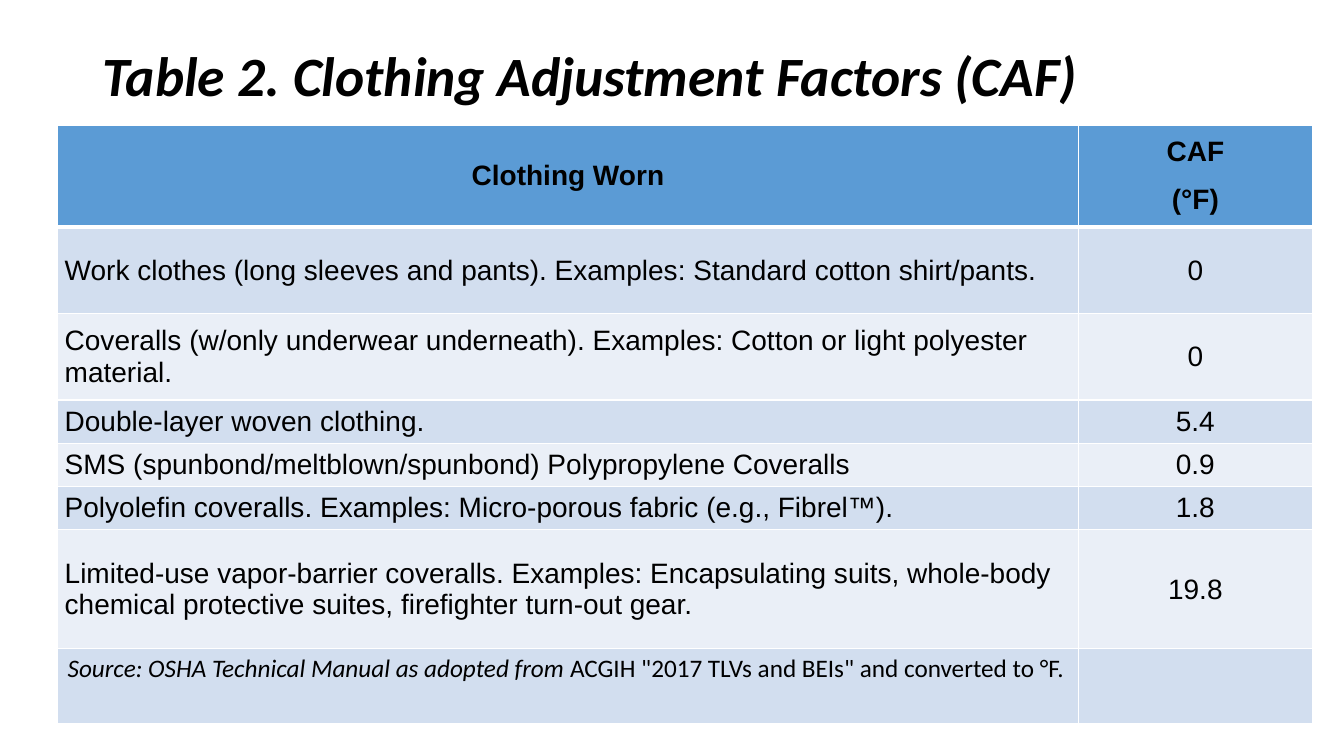
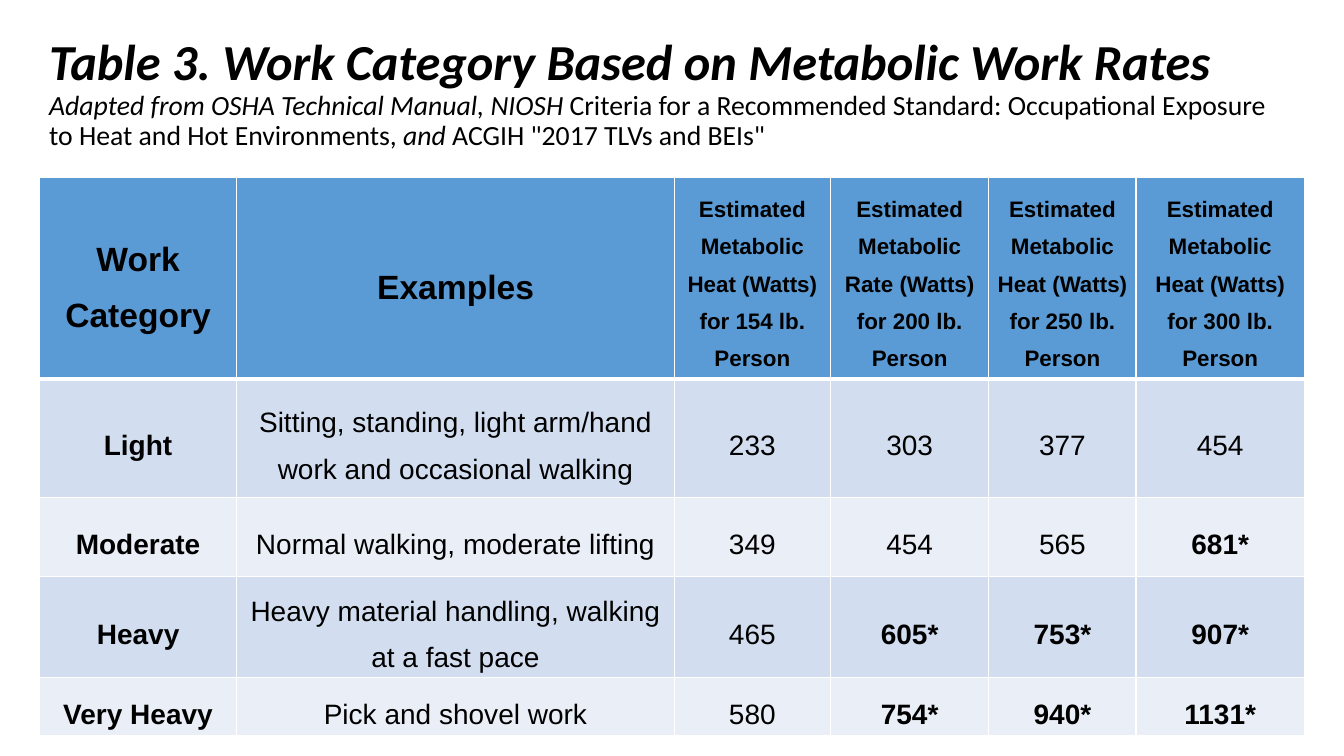
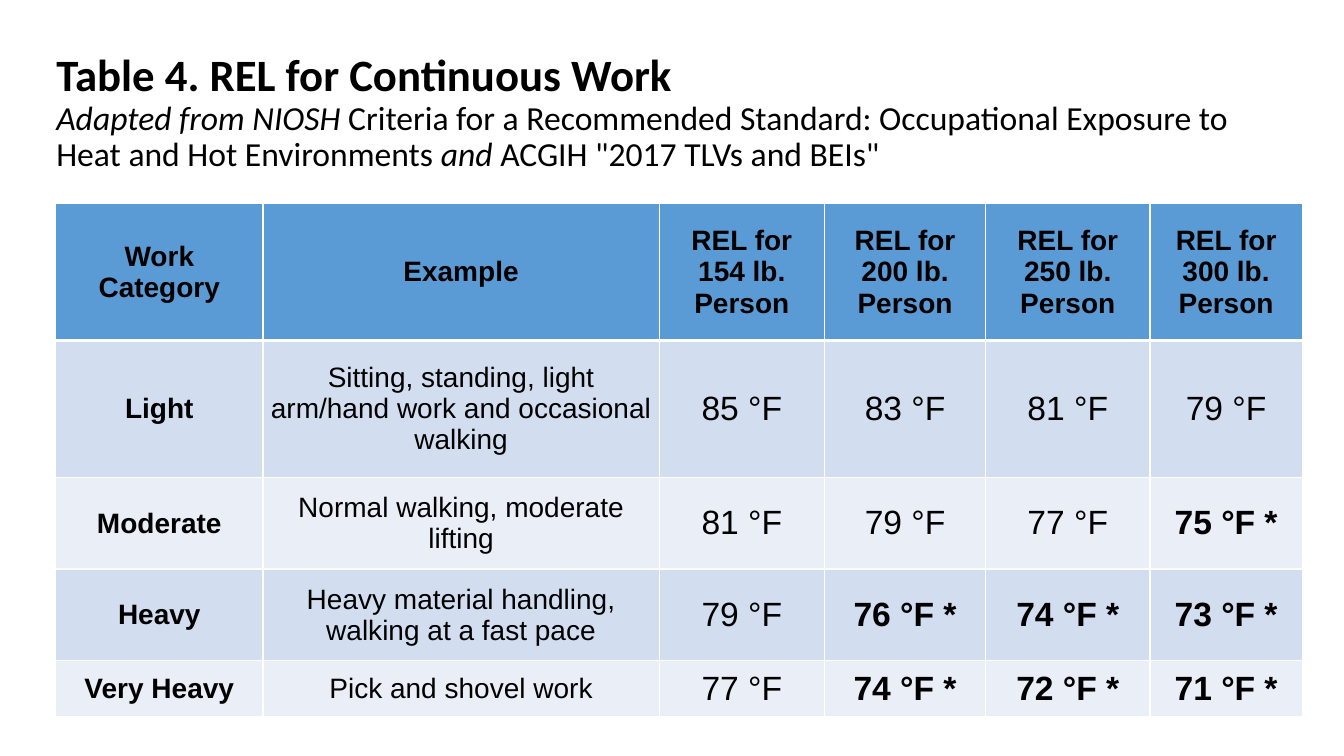
"""Build three heat-stress reference tables as slides."""
from dataclasses import dataclass

from lxml.etree import SubElement
from pptx import Presentation
from pptx.dml.color import RGBColor as RGB
from pptx.enum.text import MSO_ANCHOR as ANCHOR, PP_ALIGN as ALIGN
from pptx.oxml.ns import qn
from pptx.util import Cm, Pt


@dataclass(frozen=True)
class Theme:
    """Hold the colours, fonts and sizes shared by the slides."""
    ink: str = "000000"
    header: str = "5B9BD5"
    bands: tuple = ("D2DEEF", "EAEFF7")
    rule: str = "FFFFFF"
    title_font: str = "Calibri"
    table_font: str = "Arial"
    body: int = 20
    large: int = 24
    small: int = 16
    source: int = 18
    thin: int = 1
    thick: int = 3


T = Theme()

WEIGHTS = (154, 200, 250, 300)
WORK = [
    ("Light", "Sitting, standing, light arm/hand work and occasional walking"),
    ("Moderate", "Normal walking, moderate lifting"),
    ("Heavy", "Heavy material handling, walking at a fast pace"),
    ("Very Heavy", "Pick and shovel work"),
]
WATTS = [
    ("233", "303", "377", "454"),
    ("349", "454", "565", "681*"),
    ("465", "605*", "753*", "907*"),
    ("580", "754*", "940*", "1131*"),
]
LIMITS = [
    ("85 °F", "83 °F", "81 °F", "79 °F"),
    ("81 °F", "79 °F", "77 °F", "75 °F *"),
    ("79 °F", "76 °F *", "74 °F *", "73 °F *"),
    ("77 °F", "74 °F *", "72 °F *", "71 °F *"),
]
CLOTHING = [
    ("Work clothes (long sleeves and pants). Examples: Standard cotton shirt/pants.", "0"),
    ("Coveralls (w/only underwear underneath). Examples: Cotton or light polyester material.", "0"),
    ("Double-layer woven clothing.", "5.4"),
    ("SMS (spunbond/meltblown/spunbond) Polypropylene Coveralls", "0.9"),
    ("Polyolefin coveralls. Examples: Micro-porous fabric (e.g., Fibrel™).", "1.8"),
    ("Limited-use vapor-barrier coveralls. Examples: Encapsulating suits, whole-body "
     "chemical protective suites, firefighter turn-out gear.", "19.8"),
]
SOURCE = [
    ("Source: OSHA Technical Manual as adopted from ", "i"),
    ('ACGIH "2017 TLVs and BEIs" and converted to °F.', ""),
]
STANDARD = "Criteria for a Recommended Standard: Occupational Exposure to Heat and Hot Environments"
REFERENCE = 'ACGIH "2017 TLVs and BEIs"'

SLIDES = [
    {
        "title_box": (2.34, 1.02, 29.21, 1.9),
        "title": [(39.6, [("Table 2. Clothing Adjustment Factors (CAF)", "bi")])],
        "origin": (1.45, 3.15),
        "cols": (25.73, 5.89),
        "rows": (2.57, 2.18, 2.18, 1.09, 1.09, 1.09, 3.0, 1.88),
        "cells": [("Clothing Worn", "CAF\n(°F)"), *CLOTHING],
        "head_sizes": (T.body,) * 2,
        "body_sizes": (T.body,) * 2,
        "left_column": True,
        "source": SOURCE,
    },
    {
        "title_box": (0.99, 1.02, 31.9, 3.45),
        "title_bottom": 0.88,
        "title": [
            (36, [("Table 3. Work Category Based on Metabolic Work Rates", "bi")]),
            (19.8, [("Adapted from OSHA Technical Manual, NIOSH ", "i"),
                    (STANDARD + ",", ""), (" and ", "i"), (REFERENCE, "")]),
        ],
        "origin": (0.99, 4.47),
        "cols": (4.98, 11.02, 3.94, 3.99, 3.71, 4.24),
        "rows": (4.66, 3.0, 1.98, 2.36, 1.47),
        "cells": [
            ("Work Category", "Examples",
             *(f"Estimated Metabolic {kind} (Watts) for {lb} lb. Person"
               for kind, lb in zip(("Heat", "Rate", "Heat", "Heat"), WEIGHTS))),
            *(work + watts for work, watts in zip(WORK, WATTS)),
        ],
        "head_sizes": (T.large,) * 2 + (T.small,) * 4,
        "body_sizes": (T.body,) * 6,
        "spacing": 1.5,
    },
    {
        "title_box": (1.17, 1.02, 31.62, 3.68),
        "title": [
            (32, [("Table 4. REL for Continuous Work", "b")]),
            (24, [("Adapted from NIOSH ", "i"), (STANDARD, ""),
                  (" and ", "i"), (REFERENCE, "")]),
        ],
        "origin": (1.4, 5.13),
        "cols": (5.23, 9.98, 4.17, 4.06, 4.14, 3.84),
        "rows": (3.45, 3.45, 2.31, 2.31, 1.4),
        "cells": [
            ("Work Category", "Example", *(f"REL for {lb} lb. Person" for lb in WEIGHTS)),
            *(work + limits for work, limits in zip(WORK, LIMITS)),
        ],
        "head_sizes": (T.body,) * 6,
        "body_sizes": (T.body,) * 2 + (T.large,) * 4,
    },
]


def add_run(p, text, font, size, style=""):
    """Append a run; style holds b for bold and i for italic."""
    r = p.add_run()
    r.text = text
    r.font.name, r.font.size = font, Pt(size)
    r.font.bold, r.font.italic = "b" in style, "i" in style
    r.font.color.rgb = RGB.from_string(T.ink)


def paragraph(tf, index):
    """Return the first paragraph or append another."""
    return tf.add_paragraph() if index else tf.paragraphs[0]


def add_title(s, data):
    """Add the title with its optional reference line."""
    tf = s.shapes.add_textbox(*map(Cm, data["title_box"])).text_frame
    tf.word_wrap, tf.vertical_anchor = True, ANCHOR.MIDDLE
    tf.margin_bottom = Cm(data.get("title_bottom", 0.13))
    for i, (size, runs) in enumerate(data["title"]):
        p = paragraph(tf, i)
        p.line_spacing = 0.9
        for text, style in runs:
            add_run(p, text, T.title_font, size, style)


def paint(cell, row):
    """Draw the cell borders and fill for its row."""
    tc_pr = cell._tc.get_or_add_tcPr()
    widths = {"L": T.thin, "R": T.thin,
              "T": T.thick if row == 1 else T.thin,
              "B": T.thick if row == 0 else T.thin}
    for side, width in widths.items():
        ln = SubElement(tc_pr, qn(f"a:ln{side}"), w=str(Pt(width)))
        SubElement(SubElement(ln, qn("a:solidFill")), qn("a:srgbClr"), val=T.rule)
    cell.fill.solid()
    colour = T.bands[(row - 1) % 2] if row else T.header
    cell.fill.fore_color.rgb = RGB.from_string(colour)


def write_cell(cell, text, size, bold, align, spacing):
    """Write centred-height text, one paragraph per line."""
    cell.vertical_anchor = ANCHOR.MIDDLE
    cell.margin_left = cell.margin_right = Cm(0.18)
    cell.margin_top = cell.margin_bottom = 0
    for i, line in enumerate(text.split("\n")):
        p = paragraph(cell.text_frame, i)
        p.alignment = align
        p.space_before = p.space_after = Pt(6)
        p.line_spacing = spacing
        add_run(p, line, T.table_font, size, "b" if bold else "")


def add_grid(s, data):
    """Add the table with header, banded rows and optional source row."""
    cols, rows = data["cols"], data["rows"]
    frame = s.shapes.add_table(len(rows), len(cols), *map(Cm, data["origin"]),
                               Cm(sum(cols)), Cm(sum(rows)))
    table = frame.table
    for col, width in zip(table.columns, cols):
        col.width = Cm(width)
    for i, (row, height) in enumerate(zip(table.rows, rows)):
        row.height = Cm(height)
        for cell in row.cells:
            paint(cell, i)
    left = data.get("left_column", False)
    for i, texts in enumerate(data["cells"]):
        sizes = data["body_sizes"] if i else data["head_sizes"]
        for j, (text, size) in enumerate(zip(texts, sizes)):
            label = j == 0 and not left
            bold = i == 0 or label or text.endswith("*")
            align = ALIGN.LEFT if left and i and j == 0 else ALIGN.CENTER
            write_cell(table.cell(i, j), text, size, bold, align, data.get("spacing"))
    for text, style in data.get("source", ()):
        p = table.cell(len(rows) - 1, 0).text_frame.paragraphs[0]
        add_run(p, text, T.title_font, T.source, style)


def main():
    """Create and save the presentation."""
    prs = Presentation()
    prs.slide_width, prs.slide_height = Cm(33.87), Cm(19.05)
    for data in SLIDES:
        s = prs.slides.add_slide(prs.slide_layouts[6])
        add_title(s, data)
        add_grid(s, data)
    prs.save("out.pptx")


if __name__ == "__main__":
    main()
